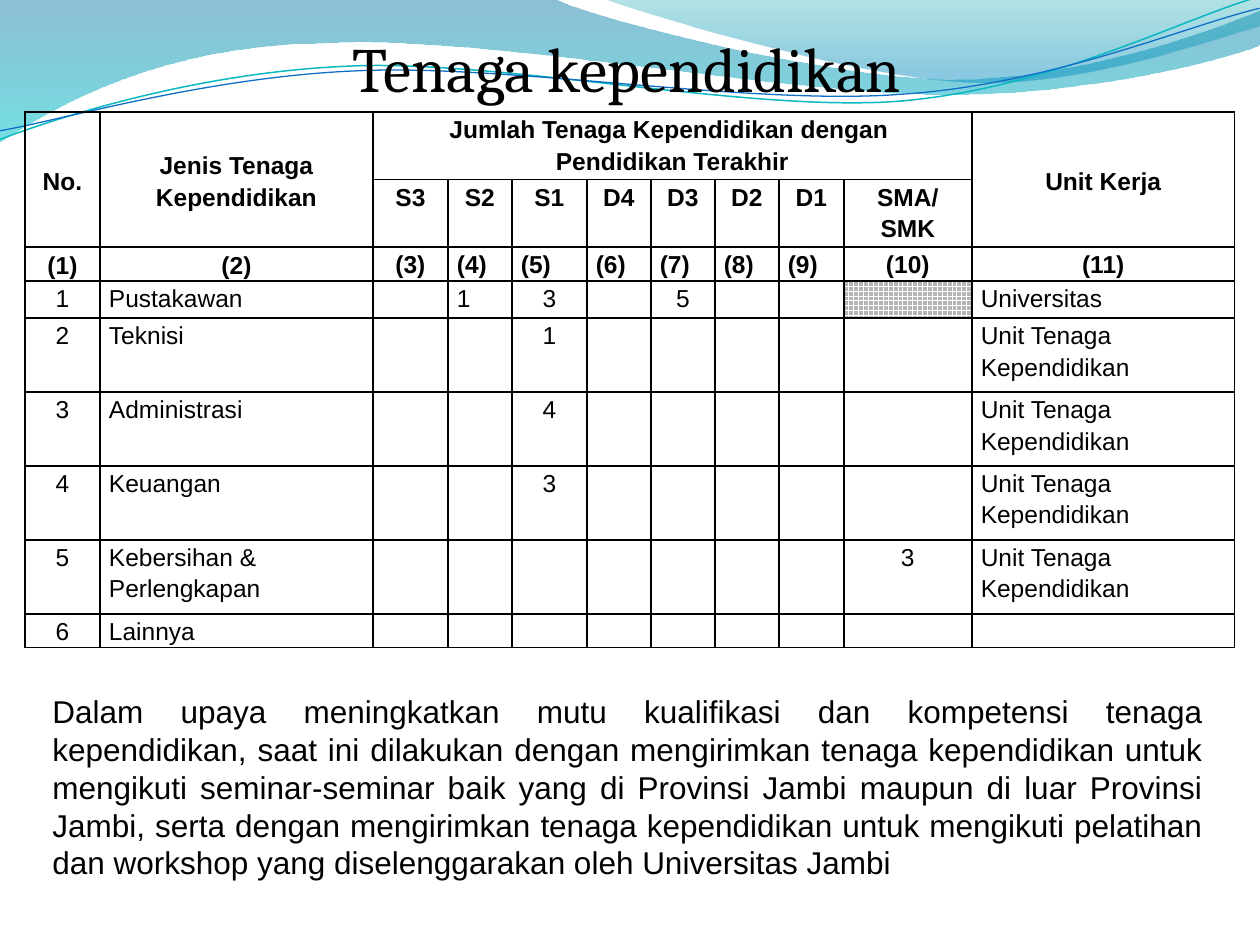
from lxml.etree import SubElement
from pptx import Presentation
from pptx.dml.color import RGBColor
from pptx.enum.dml import MSO_PATTERN
from pptx.enum.text import MSO_ANCHOR, MSO_AUTO_SIZE, PP_ALIGN
from pptx.oxml.ns import qn
from pptx.util import Emu, Pt

EMU_PER_PX = 914400 / 126
BLACK = "000000"
CENTER, LEFT, JUSTIFY = PP_ALIGN.CENTER, PP_ALIGN.LEFT, PP_ALIGN.JUSTIFY

UPPER_WAVE = [(0, 0), [(554, -1)], [(600, 21), (837, 79), (955, 79)],
              [(1075, 79), (1207, 33), (1260, 11)], [(1261, 45)],
              [(1239, 55), (1096, 96), (940, 94)], [(783, 94), (481, 35), (324, 43)],
              [(161, 45), (58, 105), (-1, 142)], [(0, 0)]]
RIGHT_WAVE = [(604, -1), [(641, 14), (859, 78), (969, 82)],
              [(1079, 87), (1211, 40), (1260, 26)], [(1260, 0)], [(604, -1)]]
TEAL_LINE = [(-3, 110), [(58, 90), (199, 52), (350, 53)],
             [(499, 53), (745, 118), (896, 114)], [(1049, 109), (1184, 45), (1260, 27)]]
BLUE_LINE = [(-2, 101), [(57, 94), (207, 57), (357, 58)],
             [(509, 58), (750, 112), (902, 107)], [(1052, 104), (1188, 52), (1262, 38)]]
LINE_ROTATION = 357.3

COLUMN_WIDTHS = [75, 273, 75, 64, 75, 64, 64, 64, 65, 128, 263]
ROW_HEIGHTS = [59, 59, 29, 37, 74, 74, 74, 74, 29]
LEVELS = ["S3", "S2", "S1", "D4", "D3", "D2", "D1", "SMA/SMK"]
UNIT = "Unit Tenaga Kependidikan"
STAFF = [("Pustakawan", {3: "1", 4: "3", 6: "5"}, "Universitas"),
         ("Teknisi", {4: "1"}, UNIT),
         ("Administrasi", {4: "4"}, UNIT),
         ("Keuangan", {4: "3"}, UNIT),
         ("Kebersihan & Perlengkapan", {9: "3"}, UNIT),
         ("Lainnya", {}, "")]
BODY = ("Dalam upaya meningkatkan mutu kualifikasi dan kompetensi tenaga kependidikan, "
        "saat ini dilakukan dengan mengirimkan tenaga kependidikan untuk mengikuti "
        "seminar-seminar baik yang di Provinsi Jambi maupun di luar Provinsi Jambi, "
        "serta dengan mengirimkan tenaga kependidikan untuk mengikuti pelatihan dan "
        "workshop yang diselenggarakan oleh Universitas Jambi")


def px(length):
    """Turn pixels into EMU."""
    return Emu(round(length * EMU_PER_PX))


def color(value):
    """Turn a hex string into a colour."""
    return RGBColor.from_string(value)


def bend(shape, segments):
    """Turn each run of three line points into one cubic curve."""
    lines = iter(list(shape._element.iter(qn("a:lnTo"))))
    for segment in segments:
        members = [next(lines) for _ in segment]
        if len(members) == 3:
            parent = members[0].getparent()
            curve = SubElement(parent, qn("a:cubicBezTo"))
            members[0].addprevious(curve)
            for member in members:
                curve.append(member[0])
                parent.remove(member)


def add_outline(slide, outline, close):
    """Add a freeform from straight and curved segments."""
    start, *segments = outline
    builder = slide.shapes.build_freeform(px(start[0]), px(start[1]))
    points = [(px(x), px(y)) for segment in segments for x, y in segment]
    builder.add_line_segments(points, close=close)
    shape = builder.convert_to_shape()
    bend(shape, segments)
    shape.shadow.inherit = False
    return shape


def add_wave(slide, outline, stops):
    """Add a wave with a translucent downward gradient."""
    shape = add_outline(slide, outline, True)
    shape.line.fill.background()
    shape.fill.gradient()
    shape.fill.gradient_angle = 270
    for stop, (position, value, _) in zip(shape.fill.gradient_stops, stops):
        stop.position = position
        stop.color.rgb = color(value)
    for element, (_, _, opacity) in zip(shape._element.iter(qn("a:srgbClr")), stops):
        SubElement(element, qn("a:alpha"), val=str(opacity * 1000))


def add_wave_line(slide, outline, value, width):
    """Add a thin open curve, slightly turned."""
    shape = add_outline(slide, outline, False)
    shape.rotation = LINE_ROTATION
    shape.fill.background()
    shape.line.color.rgb = color(value)
    shape.line.width = Pt(width)


def add_run(paragraph, text, size, font_name, bold=False):
    """Add a black run of text."""
    run = paragraph.add_run()
    run.text = text
    run.font.size = Pt(size)
    run.font.name = font_name
    run.font.bold = bold
    run.font.color.rgb = color(BLACK)


def add_text(slide, box, text, size, font_name, alignment, wrap):
    """Add a text box with one paragraph."""
    frame = slide.shapes.add_textbox(*map(px, box)).text_frame
    frame.word_wrap = wrap
    frame.auto_size = MSO_AUTO_SIZE.SHAPE_TO_FIT_TEXT
    frame.paragraphs[0].alignment = alignment
    add_run(frame.paragraphs[0], text, size, font_name)


def style_cell(cell, top, bottom):
    """Set the insets, borders and empty fill of a cell."""
    cell.margin_left = cell.margin_right = px(9)
    cell.margin_top = cell.margin_bottom = 0
    properties = cell._tc.get_or_add_tcPr()
    for side, width in (("L", 1), ("R", 1), ("T", top), ("B", bottom)):
        line = SubElement(properties, qn(f"a:ln{side}"), w=str(Pt(width)))
        SubElement(SubElement(line, qn("a:solidFill")), qn("a:srgbClr"), val=BLACK)
    cell.fill.background()
    SubElement(cell.text_frame.paragraphs[0]._p, qn("a:endParaRPr"), sz="1400")


def write_cell(cell, lines, alignment=CENTER, bold=False, middle=False):
    """Write one paragraph per line into a cell."""
    cell.vertical_anchor = MSO_ANCHOR.MIDDLE if middle else MSO_ANCHOR.TOP
    frame = cell.text_frame
    for index, text in enumerate(lines):
        paragraph = frame.add_paragraph() if index else frame.paragraphs[0]
        paragraph.alignment = alignment
        paragraph.line_spacing = 1.15
        add_run(paragraph, text, 14, "Arial", bold)


def write_header(table):
    """Fill the merged heading rows and the column numbers."""
    for column, text in ((0, "No."), (1, "Jenis Tenaga Kependidikan"), (10, "Unit Kerja")):
        table.cell(0, column).merge(table.cell(1, column))
        write_cell(table.cell(0, column), [text], bold=True, middle=True)
    table.cell(0, 2).merge(table.cell(0, 9))
    write_cell(table.cell(0, 2), ["Jumlah Tenaga Kependidikan dengan ",
                                  "Pendidikan Terakhir"], bold=True)
    for column, level in enumerate(LEVELS, 2):
        write_cell(table.cell(1, column), [level], bold=True)
    for column in range(len(COLUMN_WIDTHS)):
        alignment = JUSTIFY if 3 <= column <= 8 else CENTER
        write_cell(table.cell(2, column), [f"({column + 1})"], alignment, True, column < 2)


def write_staff(table):
    """Fill one row for each kind of staff."""
    for number, (name, counts, unit) in enumerate(STAFF, 1):
        row = number + 2
        write_cell(table.cell(row, 0), [str(number)])
        write_cell(table.cell(row, 1), [name], LEFT)
        for column, count in counts.items():
            write_cell(table.cell(row, column), [count], JUSTIFY if column == 3 else CENTER)
        if unit:
            write_cell(table.cell(row, 10), [unit], LEFT if unit == UNIT else JUSTIFY)


def add_staff_table(slide):
    """Add the table of staff by education."""
    frame = slide.shapes.add_table(len(ROW_HEIGHTS), len(COLUMN_WIDTHS), px(25), px(112),
                                   px(sum(COLUMN_WIDTHS)), px(sum(ROW_HEIGHTS)))
    table = frame.table
    table.first_row = table.horz_banding = False
    for column, width in zip(table.columns, COLUMN_WIDTHS):
        column.width = px(width)
    for index, (row, height) in enumerate(zip(table.rows, ROW_HEIGHTS)):
        row.height = px(height)
        for column, cell in enumerate(row.cells):
            spans_header = index == 0 and column in (0, 1, 10)
            style_cell(cell, 1.5 if index == 2 else 1,
                       1.5 if index == 1 or spans_header else 1)
    write_header(table)
    write_staff(table)
    hatch = table.cell(3, 9).fill
    hatch.patterned()
    hatch.pattern = MSO_PATTERN.CROSS
    hatch.fore_color.rgb = color("FFFFFF")
    hatch.back_color.rgb = color("B4B4B4")


def main():
    """Build the slide and save it."""
    presentation = Presentation()
    presentation.slide_width, presentation.slide_height = px(1260), px(945)
    slide = presentation.slides.add_slide(presentation.slide_layouts[6])
    add_wave(slide, UPPER_WAVE, [(0, "0074A1", 45), (1, "00C6CF", 55)])
    add_wave(slide, RIGHT_WAVE, [(0, "00A1A9", 30), (0.8, "008BBF", 45)])
    add_wave_line(slide, TEAL_LINE, "0AB8BF", 0.85)
    add_wave_line(slide, BLUE_LINE, "0F6FC6", 0.75)
    add_text(slide, (322, 23, 610, 89), "Tenaga kependidikan", 36, "Cambria", CENTER, False)
    add_staff_table(slide)
    add_text(slide, (40, 686, 1175, 204), BODY, 18, "Arial", JUSTIFY, True)
    presentation.save("out.pptx")


if __name__ == "__main__":
    main()
